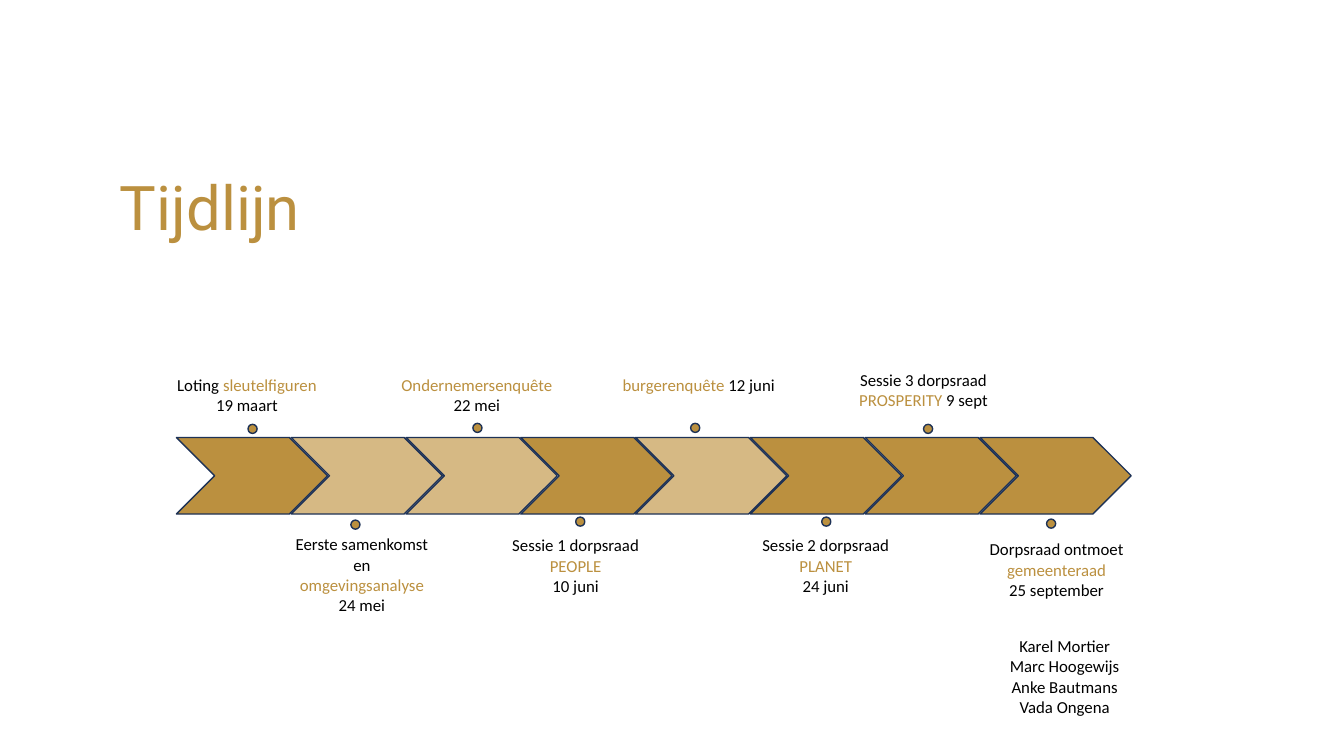
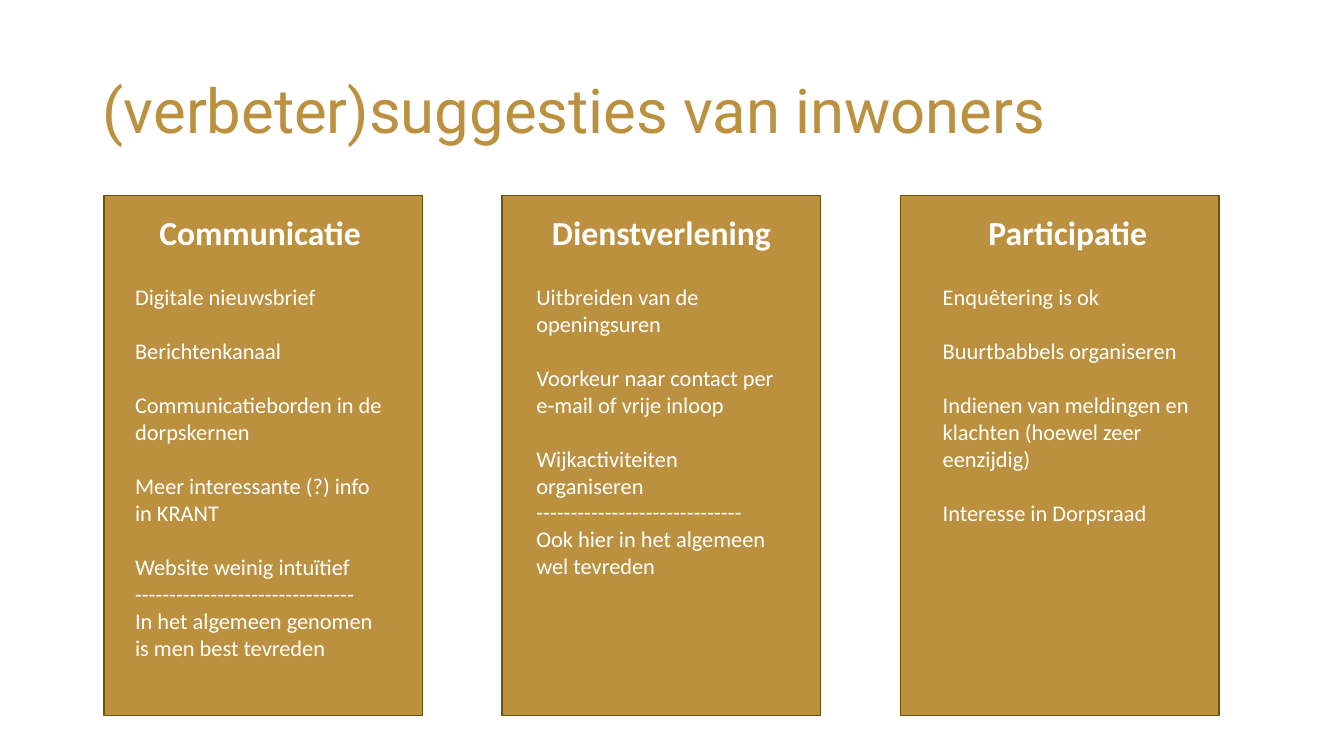
from dataclasses import dataclass

from lxml.etree import SubElement
from pptx import Presentation
from pptx.dml.color import RGBColor
from pptx.enum.shapes import MSO_SHAPE
from pptx.enum.text import MSO_ANCHOR, MSO_AUTO_SIZE, PP_ALIGN
from pptx.oxml.ns import qn
from pptx.util import Inches, Pt

# Shared style
GOLD, SAND, NAVY, OLIVE = "BB903F", "D6B984", "1E3256", "705400"
BLACK, WHITE = "000000", "FFFFFF"
TITLE_FONT, BODY_FONT = "Roboto", "Calibri"

# Timeline grid
STEPS = 8
ARROW_LEFT, ARROW_TOP, ARROW_W, ARROW_H = 1.75, 4.34, 1.5, 0.76
ARROW_PITCH = 7.97 / (STEPS - 1)
DOT = 0.09

# Column grid
COL_LEFT, COL_TOP, COL_W, COL_H, COL_GAP = 1.03, 1.94, 3.16, 5.16, 0.79
COL_TEXT_W = 2.48
HEAD_GAP, ITEM_GAP = 22, 19.5


@dataclass
class Milestone:
    """One step; in the caption, text after a | switches colour."""
    fill: str
    dot: tuple[float, float]
    left: float
    top: float
    width: float
    lines: list[str]


@dataclass
class Column:
    head: str
    inset: float
    items: list[str]
    closing: list[str]


MILESTONES = [
    Milestone(GOLD, (2.46, 4.21), 1.65, 3.67, 1.6, ["Loting |sleutelfiguren", "19 maart"]),
    Milestone(SAND, (3.48, 5.16), 2.79, 5.25, 1.6,
              ["Eerste samenkomst en |omgevingsanalyse| 24 mei"]),
    Milestone(SAND, (4.69, 4.2), 3.85, 3.67, 1.76, ["|Ondernemersenquête| 22 mei"]),
    Milestone(GOLD, (5.71, 5.13), 4.91, 5.26, 1.6,
              ["Sessie 1 dorpsraad", "|PEOPLE", "10 juni"]),
    Milestone(SAND, (6.85, 4.2), 6.05, 3.67, 1.76, ["|burgerenquête| 12 juni"]),
    Milestone(GOLD, (8.15, 5.13), 7.39, 5.26, 1.6,
              ["Sessie 2 dorpsraad", "|PLANET", "24 juni"]),
    Milestone(GOLD, (9.16, 4.21), 8.36, 3.62, 1.6,
              ["Sessie 3 dorpsraad", "|PROSPERITY |9 sept"]),
    Milestone(GOLD, (10.38, 5.15), 9.68, 5.3, 1.6,
              ["Dorpsraad ontmoet |gemeenteraad", "25 september"]),
]
NAMES = ["Karel Mortier", "Marc Hoogewijs", "Anke Bautmans", "Vada Ongena"]

COLUMNS = [
    Column("Communicatie", 0.31,
           ["Digitale nieuwsbrief", "Berichtenkanaal", "Communicatieborden in de dorpskernen",
            "Meer interessante (?) info in KRANT", "Website weinig intuïtief"],
           ["-" * 32, "In het algemeen genomen is men best tevreden"]),
    Column("Dienstverlening", 0.34,
           ["Uitbreiden van de openingsuren", "Voorkeur naar contact per e-mail of vrije inloop",
            "Wijkactiviteiten organiseren"],
           ["-" * 30, "Ook hier in het algemeen wel tevreden"]),
    Column("Participatie", 0.42,
           ["Enquêtering is ok", "Buurtbabbels organiseren",
            "Indienen van meldingen en klachten (hoewel zeer eenzijdig)", "Interesse in Dorpsraad"],
           []),
]


def rgb(value: str) -> RGBColor:
    return RGBColor.from_string(value)


def place(sp, left: float, top: float, width: float, height: float) -> None:
    sp.left, sp.top, sp.width, sp.height = map(Inches, (left, top, width, height))


def paint(sp, fill: str, line: str) -> None:
    sp.fill.solid()
    sp.fill.fore_color.rgb = rgb(fill)
    sp.line.color.rgb = rgb(line)
    sp.line.width = Pt(1)


def add_text(tf, text: str, *, size: float, color: str, accent: str = GOLD,
             font: str = BODY_FONT, bold: bool = False, align=PP_ALIGN.LEFT,
             before: float = 0, spacing: float = 1.0) -> None:
    """Write one unbulleted paragraph, using the first one while it is empty."""
    p = tf.paragraphs[0] if not tf.paragraphs[0].runs else tf.add_paragraph()
    pPr = p._p.get_or_add_pPr()
    pPr.set("marL", "0")
    pPr.set("indent", "0")
    SubElement(pPr, qn("a:buNone"))
    p.alignment, p.line_spacing = align, spacing
    p.space_before, p.space_after = Pt(before), Pt(0)
    for i, part in enumerate(text.split("|")):
        if part:
            r = p.add_run()
            r.text = part
            r.font.name, r.font.size, r.font.bold = font, Pt(size), bold
            r.font.color.rgb = rgb(accent if i % 2 else color)


def add_slide(prs, layout: int, title: str, left: float, top: float):
    s = prs.slides.add_slide(prs.slide_layouts[layout])
    place(s.shapes.title, left, top, 11.5, 1.45)
    tf = s.shapes.title.text_frame
    tf.vertical_anchor, tf.auto_size = MSO_ANCHOR.MIDDLE, MSO_AUTO_SIZE.NONE
    add_text(tf, title, size=44, color=GOLD, font=TITLE_FONT, spacing=0.9)
    return s


def add_shape(s, kind, left: float, top: float, width: float, height: float, fill: str) -> None:
    sp = s.shapes.add_shape(kind, *map(Inches, (left, top, width, height)))
    sp.shadow.inherit = False
    paint(sp, fill, NAVY)


def add_caption(s, left: float, top: float, width: float, lines: list[str]) -> None:
    height = 0.1 + 0.2 * len(lines)
    tf = s.shapes.add_textbox(*map(Inches, (left, top, width, height))).text_frame
    tf.word_wrap = True
    for line in lines:
        add_text(tf, line, size=12, color=BLACK, align=PP_ALIGN.CENTER)


def fill_column(sp, col: Column, left: float) -> None:
    place(sp, left, COL_TOP, COL_W, COL_H)
    paint(sp, GOLD, OLIVE)
    tf = sp.text_frame
    tf.word_wrap, tf.auto_size = True, MSO_AUTO_SIZE.NONE
    tf.vertical_anchor = MSO_ANCHOR.TOP
    tf.margin_left, tf.margin_top = Inches(col.inset), Inches(0.16)
    tf.margin_right = Inches(COL_W - COL_TEXT_W - col.inset)
    add_text(tf, col.head, size=24, color=WHITE, bold=True, align=PP_ALIGN.CENTER)
    for i, item in enumerate(col.items):
        add_text(tf, item, size=16, color=WHITE, before=ITEM_GAP if i else HEAD_GAP)
    for line in col.closing:
        add_text(tf, line, size=16, color=WHITE)


def build_timeline(prs) -> None:
    s = add_slide(prs, 5, "Tijdlijn", 1.09, 1.36)
    # Arrow band
    for i, m in enumerate(MILESTONES):
        add_shape(s, MSO_SHAPE.CHEVRON, ARROW_LEFT + i * ARROW_PITCH, ARROW_TOP,
                  ARROW_W, ARROW_H, m.fill)
    # Dots and captions
    for m in MILESTONES:
        add_shape(s, MSO_SHAPE.OVAL, *m.dot, DOT, DOT, GOLD)
        add_caption(s, m.left, m.top, m.width, m.lines)
    add_caption(s, 9.68, 6.26, 1.76, NAMES)


def build_suggestions(prs) -> None:
    s = add_slide(prs, 4, "(verbeter)suggesties van inwoners", 0.92, 0.4)
    bodies = [sp for sp in s.placeholders if sp.placeholder_format.idx > 0]
    for i, (sp, col) in enumerate(zip(bodies, COLUMNS)):
        fill_column(sp, col, COL_LEFT + i * (COL_W + COL_GAP))
    # Unused placeholders
    for sp in bodies[len(COLUMNS):]:
        sp._element.getparent().remove(sp._element)


def main() -> None:
    prs = Presentation()
    prs.slide_width, prs.slide_height = Inches(13.33), Inches(7.5)
    build_timeline(prs)
    build_suggestions(prs)
    prs.save("out.pptx")


if __name__ == "__main__":
    main()
